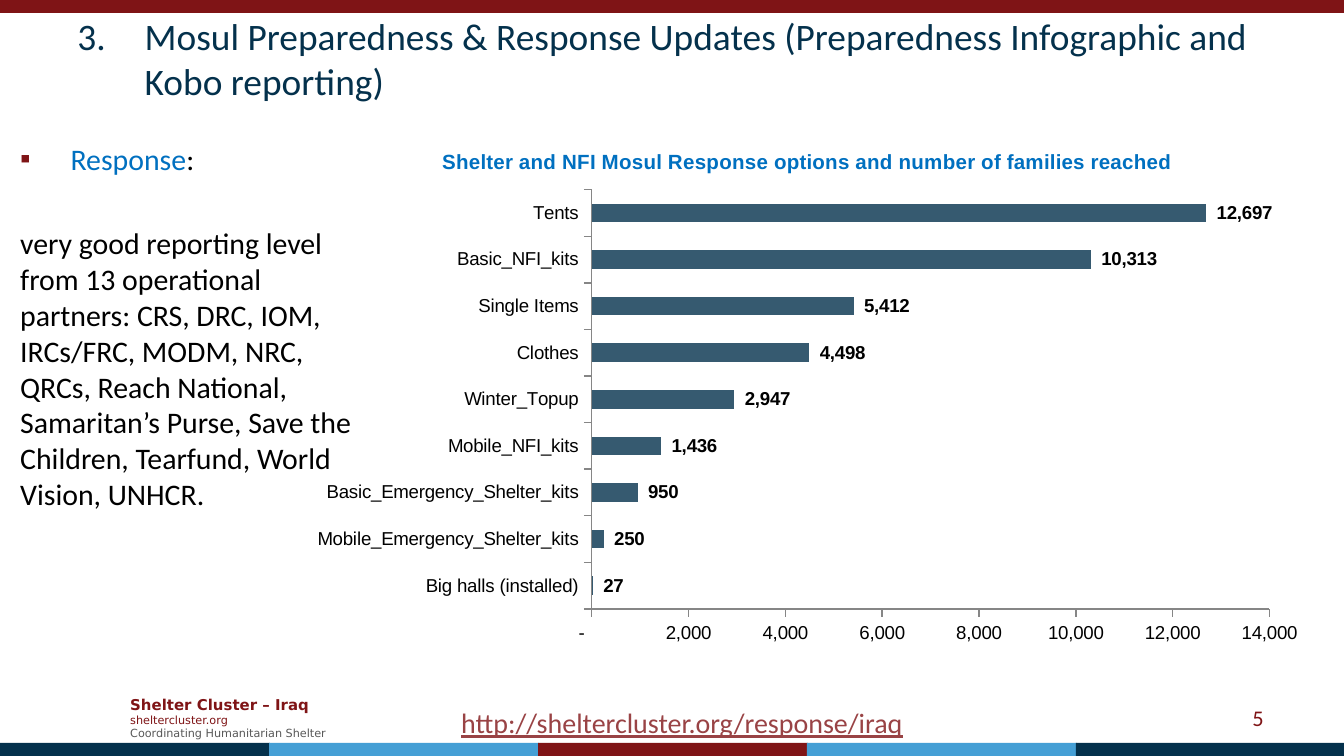
"""Build the Mosul response slide with its bar chart of families reached."""
import pptx
import pptx.chart.data
import pptx.dml.color
import pptx.enum.chart
import pptx.enum.shapes
import pptx.enum.text
import pptx.oxml
import pptx.oxml.ns
import pptx.util
from lxml import etree

RED = pptx.dml.color.RGBColor(0x7F, 0x14, 0x16)
NAVY = pptx.dml.color.RGBColor(0x04, 0x31, 0x4C)
SKY = pptx.dml.color.RGBColor(0x45, 0x9F, 0xD5)
BLUE = pptx.dml.color.RGBColor(0x00, 0x70, 0xC0)
LINK = pptx.dml.color.RGBColor(0x99, 0x43, 0x45)
GREY = pptx.dml.color.RGBColor(0x59, 0x59, 0x59)
AXIS = pptx.dml.color.RGBColor(0x86, 0x86, 0x86)
BAR = pptx.dml.color.RGBColor(0x36, 0x5A, 0x70)
BLACK = pptx.dml.color.RGBColor(0, 0, 0)
PX = 914400 / 134.4
NUMBER_FORMAT = '_(* #,##0_);_(* \\(#,##0\\);_(* "-"??_);_('
MIDDLE = pptx.enum.text.MSO_ANCHOR.MIDDLE
TOP = pptx.enum.text.MSO_ANCHOR.TOP


def box(*lengths):
    return [round(length * PX) for length in lengths]


def add_run(paragraph, text, size, color, name="Calibri", bold=False):
    run = paragraph.add_run()
    run.text = text
    run.font.size = pptx.util.Pt(size)
    run.font.name = name
    run.font.bold = bold
    run.font.color.rgb = color
    return run


presentation = pptx.Presentation()
presentation.slide_width, presentation.slide_height = box(1344, 756)
slide = presentation.slides.add_slide(presentation.slide_layouts[5])

bars = [(0, 0, 1344, 13, RED)]
for index, color in enumerate([NAVY, SKY, RED, SKY, NAVY]):
    bars.append((index * 269, 743, 270 if index < 4 else 268, 13, color))
for left, top, width, height, color in bars:
    shape = slide.shapes.add_shape(
        pptx.enum.shapes.MSO_SHAPE.RECTANGLE, *box(left, top, width, height))
    shape.shadow.inherit = False
    shape.fill.solid()
    shape.fill.fore_color.rgb = color
    shape.line.fill.background()

title = slide.shapes.title
title.left, title.top, title.width, title.height = box(64, 31, 1212, 54)
title.text_frame.auto_size = pptx.enum.text.MSO_AUTO_SIZE.NONE
title.text_frame.vertical_anchor = MIDDLE
paragraph = title.text_frame.paragraphs[0]
paragraph.alignment = pptx.enum.text.PP_ALIGN.LEFT
properties = paragraph._p.get_or_add_pPr()
properties.set("marL", "457200")
properties.set("indent", "-457200")
etree.SubElement(properties, pptx.oxml.ns.qn("a:buAutoNum"), type="arabicPeriod", startAt="3")
add_run(paragraph, "Mosul Preparedness & Response Updates (Preparedness Infographic "
        "and Kobo reporting)", 20, NAVY)

frames = {}
for name, place, anchor in [
    ("footer", (117, 688, 232, 59), MIDDLE),
    ("number", (964, 698, 313, 40), MIDDLE),
    ("address", (448, 699, 891, 47), TOP),
    ("response", (7, 134, 384, 567), TOP),
]:
    frames[name] = slide.shapes.add_textbox(*box(*place)).text_frame
    frames[name].word_wrap = True
    frames[name].vertical_anchor = anchor

footer = frames["footer"]
for index, (text, size, color, bold) in enumerate([
    ("Shelter Cluster – Iraq", 8, RED, True),
    ("sheltercluster.org", 6, RED, False),
    ("Coordinating Humanitarian Shelter", 6, GREY, False),
]):
    paragraph = footer.add_paragraph() if index else footer.paragraphs[0]
    add_run(paragraph, text, size, color, "DejaVu Sans", bold)

paragraph = frames["number"].paragraphs[0]
paragraph.alignment = pptx.enum.text.PP_ALIGN.RIGHT
add_run(paragraph, "5", 12, RED)

address = add_run(frames["address"].paragraphs[0],
                  "http://sheltercluster.org/response/iraq", 15, LINK)
address.font.underline = True

paragraph = frames["response"].paragraphs[0]
properties = paragraph._p.get_or_add_pPr()
properties.set("marL", "342900")
properties.set("indent", "-342900")
bullet_color = etree.SubElement(properties, pptx.oxml.ns.qn("a:buClr"))
etree.SubElement(bullet_color, pptx.oxml.ns.qn("a:srgbClr"), val=str(RED))
etree.SubElement(properties, pptx.oxml.ns.qn("a:buFont"), typeface="Arial")
etree.SubElement(properties, pptx.oxml.ns.qn("a:buChar"), char="▪")
add_run(paragraph, "Response", 16, BLUE)
add_run(paragraph, ":", 16, BLACK)
paragraph = frames["response"].add_paragraph()
paragraph.space_before = pptx.util.Pt(26)
add_run(paragraph, "very good reporting level from 13 operational partners: CRS, DRC, IOM, "
        "IRCs/FRC, MODM, NRC, QRCs, Reach National, Samaritan’s Purse, Save the Children, "
        "Tearfund, World Vision, UNHCR.", 16, BLACK)

families = {
    "Big halls (installed)": 27,
    "Mobile_Emergency_Shelter_kits": 250,
    "Basic_Emergency_Shelter_kits": 950,
    "Mobile_NFI_kits": 1436,
    "Winter_Topup": 2947,
    "Clothes": 4498,
    "Single Items": 5412,
    "Basic_NFI_kits": 10313,
    "Tents": 12697,
}
chart_data = pptx.chart.data.CategoryChartData()
chart_data.categories = list(families)
chart_data.add_series("Series 1", list(families.values()))
chart = slide.shapes.add_chart(
    pptx.enum.chart.XL_CHART_TYPE.BAR_CLUSTERED, *box(294, 126, 1027, 531), chart_data).chart
chart.font.size = pptx.util.Pt(10)
chart.font.name = "Arial"
chart.font.color.rgb = BLACK
chart.has_legend = False
chart.has_title = True
add_run(chart.chart_title.text_frame.paragraphs[0],
        "Shelter and NFI Mosul Response options and number of families reached",
        11, BLUE, "Arial", True)

for axis in (chart.category_axis, chart.value_axis):
    axis.has_major_gridlines = False
    axis.major_tick_mark = pptx.enum.chart.XL_TICK_MARK.OUTSIDE
    axis.minor_tick_mark = pptx.enum.chart.XL_TICK_MARK.NONE
    axis.format.line.color.rgb = AXIS
    axis.format.line.width = pptx.util.Pt(0.75)
chart.value_axis.minimum_scale = 0
chart.value_axis.maximum_scale = 14000
chart.value_axis.major_unit = 2000

plot = chart.plots[0]
plot.gap_width = 150
plot.vary_by_categories = False
series = plot.series[0]
series.format.fill.solid()
series.format.fill.fore_color.rgb = BAR
labels = series.data_labels
labels.show_value = True
labels.position = pptx.enum.chart.XL_LABEL_POSITION.OUTSIDE_END
labels.font.bold = True
labels.font.size = pptx.util.Pt(10)
labels.font.name = "Arial"
labels.font.color.rgb = BLACK
for numbers in (chart.value_axis.tick_labels, labels):
    numbers.number_format = NUMBER_FORMAT
    numbers.number_format_is_linked = False

plot_area = chart._chartSpace.chart.plotArea
for old_layout in plot_area.findall(pptx.oxml.ns.qn("c:layout")):
    plot_area.remove(old_layout)
layout = etree.Element(pptx.oxml.ns.qn("c:layout"))
manual = etree.SubElement(layout, pptx.oxml.ns.qn("c:manualLayout"))
for tag, value in [("layoutTarget", "inner"), ("xMode", "edge"), ("yMode", "edge"),
                   ("x", "0.29"), ("y", "0.12"), ("w", "0.66"), ("h", "0.79")]:
    etree.SubElement(manual, pptx.oxml.ns.qn("c:" + tag), val=value)
plot_area.insert(0, layout)

presentation.save("out.pptx")
